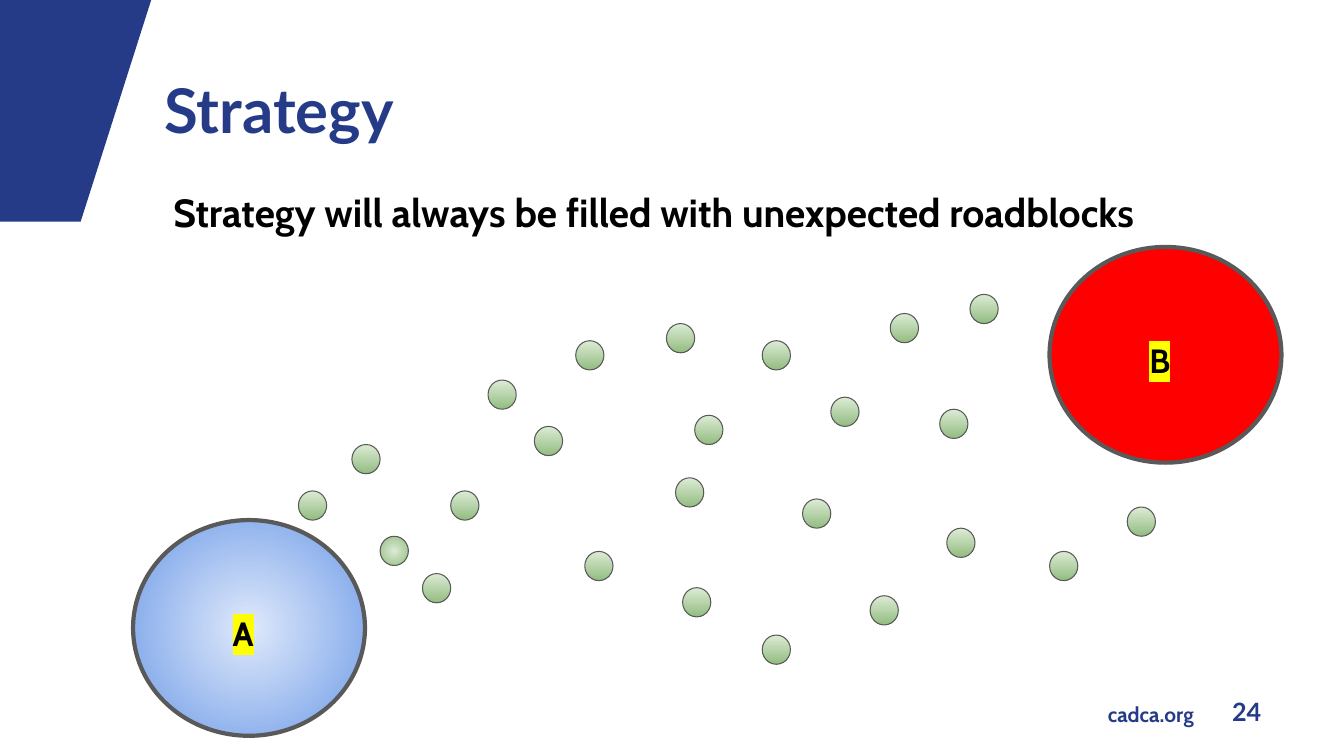
import pptx
import pptx.util
import pptx.dml.color
import pptx.enum.shapes
import pptx.enum.text
import pptx.oxml

PP, MSO = pptx.enum.text.PP_ALIGN, pptx.enum.text.MSO_ANCHOR
NAVY, BLACK, GREY, RED, YELLOW = "263B88", "000000", "595959", "FF0000", "FFFF00"
BLUES, GREENS = ("DFE9FB", "6E9BE7"), ("DCECD5", "93BC81")
NS = 'xmlns:a="http://schemas.openxmlformats.org/drawingml/2006/main"'

prs = pptx.Presentation()
prs.slide_width = pptx.util.Inches(13.33)
prs.slide_height = pptx.util.Inches(7.5)
CELL = prs.slide_height // 75  # square grid, 75 rows high
s = prs.slides.add_slide(prs.slide_layouts[5])


def write(text, box, sp=None, size=24, font="Cabin", color=BLACK, align=PP.LEFT,
          anchor=MSO.TOP, inset=(1, 1), spacing=None, highlight=None):
    """Put formatted text in a placeholder or a new text box; box is in cells."""
    sp = sp or s.shapes.add_textbox(0, 0, 0, 0)
    sp.left, sp.top, sp.width, sp.height = (int(v * CELL) for v in box)
    tf = sp.text_frame
    tf.word_wrap, tf.auto_size, tf.vertical_anchor = True, pptx.enum.text.MSO_AUTO_SIZE.NONE, anchor
    tf.margin_left = tf.margin_right = int(inset[0] * CELL)
    tf.margin_top = tf.margin_bottom = int(inset[1] * CELL)
    p = tf.paragraphs[0]
    p.alignment, p.line_spacing = align, spacing
    r = p.add_run()
    r.text = text
    r.font.size, r.font.name, r.font.bold = pptx.util.Pt(size), font, True
    r.font.color.rgb = pptx.dml.color.RGBColor.from_string(color)
    if highlight:
        mark = pptx.oxml.parse_xml(f'<a:highlight {NS}><a:srgbClr val="{highlight}"/></a:highlight>')
        r.font.fill._xPr.solidFill.addnext(mark)


def circle(box, fill, weight, radial=False):
    """Draw an ellipse with a plain fill or a pair of gradient colours."""
    sp = s.shapes.add_shape(pptx.enum.shapes.MSO_SHAPE.OVAL, *(int(v * CELL) for v in box))
    sp.shadow.inherit = False
    sp.line.color.rgb = pptx.dml.color.RGBColor.from_string(GREY)
    sp.line.width = pptx.util.Pt(weight)
    if isinstance(fill, str):
        sp.fill.solid()
        sp.fill.fore_color.rgb = pptx.dml.color.RGBColor.from_string(fill)
        return
    sp.fill.gradient()
    sp.fill.gradient_angle = 270
    for stop, color, position in zip(sp.fill.gradient_stops, fill, (0, 1)):
        stop.color.rgb = pptx.dml.color.RGBColor.from_string(color)
        stop.position = position
    if radial:
        lin = sp._element.spPr.find(".//" + pptx.oxml.ns.qn("a:lin"))
        lin.getparent().replace(lin, pptx.oxml.parse_xml(
            f'<a:path {NS} path="circle"><a:fillToRect l="50000" t="50000" r="50000" b="50000"/></a:path>'))


# Corner wedge
fb = s.shapes.build_freeform(0, 0, scale=CELL)
fb.add_line_segments([(15.3, 0), (7.9, 22), (0, 22)], close=True)
wedge = fb.convert_to_shape()
wedge.shadow.inherit = False
wedge.fill.solid()
wedge.fill.fore_color.rgb = pptx.dml.color.RGBColor.from_string(NAVY)
wedge.line.fill.background()

# Title, statement and footer
write("Strategy", (15.3, 4, 108.8, 14.5), sp=s.shapes.title, size=44, font="Lato",
      color=NAVY, anchor=MSO.MIDDLE, inset=(1, 0.5), spacing=0.9)
write("Strategy will always be filled with unexpected roadblocks",
      (16.2, 17.7, 108.1, 6.8), size=28)
write("cadca.org", (109, 69, 10.3, 3.6), size=15, color=NAVY, align=PP.CENTER,
      anchor=MSO.MIDDLE, inset=(0, 0))
write("24", (120.5, 68.6, 6.3, 4), size=18, font="Lato", color=NAVY,
      align=PP.CENTER, inset=(1, 0.5))

# Start A and goal B
for letter, x, y, fill in (("A", 13.2, 51.6, BLUES), ("B", 104.1, 24.5, RED)):
    circle((x, y, 23, 21.4), fill, 3, radial=True)
    write(letter, (x + 8.9, y + 8.2, 5.2, 5), highlight=YELLOW)

# Roadblocks scattered between A and B, from left to right
DOTS = [
    (29.6, 48.7), (34.9, 44.1), (37.7, 53.2), (41.9, 56.9), (44.7, 48.7), (48.4, 37.7),
    (53, 42.3), (57.1, 33.8), (58, 54.7), (66.1, 32.1), (67, 47.4), (67.7, 58.3),
    (68.9, 41.2), (75.6, 33.8), (75.6, 63), (79.6, 49.5), (82.4, 39.4), (86.3, 59.1),
    (88.3, 31.1), (93.2, 40.6), (93.9, 52.4), (96.2, 29.2), (104.1, 54.7), (111.8, 50.3),
]
for i, (x, y) in enumerate(DOTS):
    circle((x, y, 2.8, 2.9), GREENS, 0.75, radial=(i == 2))

prs.save("out.pptx")
